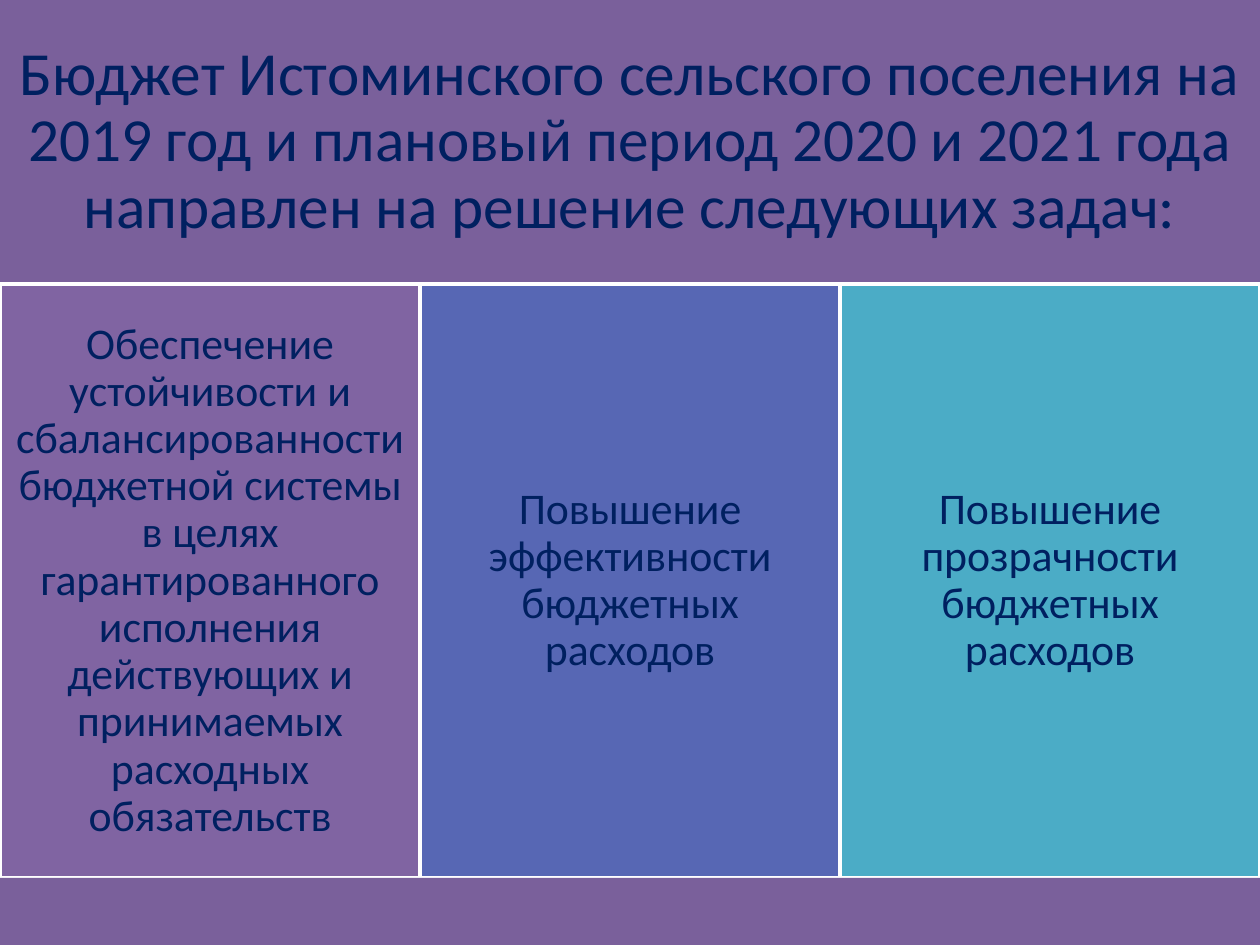
from pptx import Presentation
from pptx.dml.color import RGBColor
from pptx.enum.shapes import MSO_SHAPE
from pptx.enum.text import MSO_ANCHOR, PP_ALIGN
from pptx.util import Pt

RECT = MSO_SHAPE.RECTANGLE
MIDDLE = MSO_ANCHOR.MIDDLE
CENTER = PP_ALIGN.CENTER

# Content
TITLE = ("Бюджет Истоминского сельского поселения на 2019 год и плановый "
         "период 2020 и 2021 года направлен на решение следующих задач:")
TASKS = [
    ("Обеспечение устойчивости и сбалансированности бюджетной системы "
     "в целях гарантированного исполнения действующих и принимаемых "
     "расходных обязательств", "violet"),
    ("Повышение эффективности бюджетных расходов", "blue"),
    ("Повышение прозрачности бюджетных расходов", "teal"),
]
COLORS = {"band": "7A609B", "violet": "8064A2", "blue": "5767B4",
          "teal": "4BACC6", "edge": "FFFFFF", "text": "002060"}

# Layout in px, 126 to the inch
SCALE = 914400 / 126
WIDTH, HEIGHT = 1260, 945
TOP, FOOT = 284, 878
COL = WIDTH // len(TASKS)


def emu(px):
    return round(px * SCALE)


def color(name):
    return RGBColor.from_string(COLORS[name])


def add_box(slide, place, fill, edge=False):
    box = slide.shapes.add_shape(RECT, *map(emu, place))
    box.shadow.inherit = False
    box.fill.solid()
    box.fill.fore_color.rgb = color(fill)
    if edge:
        box.line.color.rgb = color("edge")
        box.line.width = Pt(2)
    else:
        box.line.fill.background()
    return box


def write(box, text, size, inset):
    frame = box.text_frame
    pad = emu(inset)
    para = frame.paragraphs[0]
    run = para.add_run()
    run.text = text
    formats = [
        (frame, {"word_wrap": True, "vertical_anchor": MIDDLE,
                 "margin_left": pad, "margin_right": pad,
                 "margin_top": pad, "margin_bottom": pad}),
        (para, {"alignment": CENTER, "line_spacing": 0.9}),
        (run.font, {"name": "Calibri", "size": Pt(size)}),
    ]
    for part, values in formats:
        for key, value in values.items():
            setattr(part, key, value)
    run.font.color.rgb = color("text")


def main():
    deck = Presentation()
    deck.slide_width, deck.slide_height = emu(WIDTH), emu(HEIGHT)
    slide = deck.slides.add_slide(deck.slide_layouts[6])

    # Title band
    write(add_box(slide, (0, 0, WIDTH, TOP), "band"), TITLE, 35, 19)

    # Task columns
    for i, (text, fill) in enumerate(TASKS):
        place = (i * COL, TOP, COL, FOOT - TOP)
        write(add_box(slide, place, fill, edge=True), text, 25, 13)

    # Bottom band
    add_box(slide, (0, FOOT, WIDTH, HEIGHT - FOOT), "band")

    deck.save("out.pptx")


if __name__ == "__main__":
    main()
